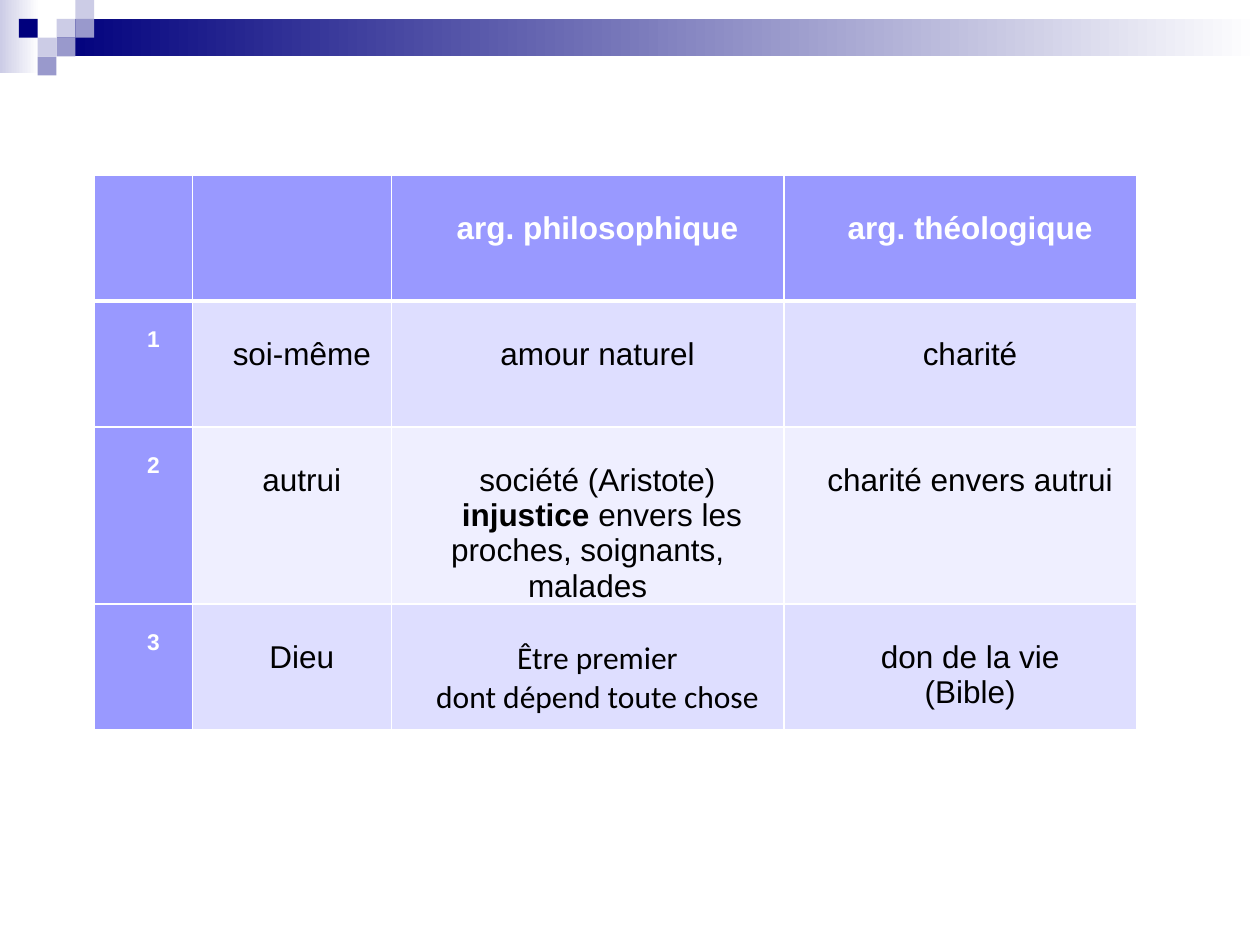
from lxml.etree import SubElement
from pptx import Presentation
from pptx.dml.color import RGBColor
from pptx.enum.shapes import MSO_SHAPE as Shape
from pptx.enum.text import PP_ALIGN as Align
from pptx.oxml.ns import qn
from pptx.util import Cm, Pt

NAVY, LILAC, PALE, WHITE, BLACK = "00007D", "9999CC", "CCCCE6", "FFFFFF", "000000"
HEADER_FILL, BAND_FILLS = "9999FF", ("EFEFFF", "DEDEFF")

GRADIENT_BARS = [
    (0, 0, 0.79, 1.47, PALE),
    (1.14, 0.38, 24.26, 0.76, NAVY),
]
SQUARE = 0.38
SQUARES = [
    (3, 1, PALE), (4, 0, PALE), (4, 1, LILAC), (2, 2, PALE),
    (1, 1, NAVY), (3, 2, LILAC), (2, 3, LILAC),
]

ROWS = [
    ["", "", "arg. philosophique", "arg. théologique"],
    ["1", "soi-même", "amour naturel", "charité"],
    ["2", "autrui",
     ["société (Aristote)",
      [(" injustice", True), (" envers les proches, soignants, malades", False)]],
     "charité envers autrui"],
    ["3", "Dieu", ["Être premier", "dont dépend toute chose"],
     ["don de la vie", "(Bible)"]],
]
COLUMN_WIDTHS = [1.97, 4.01, 7.91, 7.11]
ROW_HEIGHTS = [2.53, 2.54, 3.56, 2.54]
TABLE_LEFT, TABLE_TOP = 1.91, 3.54
CALIBRI_CELL = (3, 2)


def color(value):
    return RGBColor.from_string(value)


def add_rectangle(page, left, top, width, height):
    box = page.shapes.add_shape(
        Shape.RECTANGLE, Cm(left), Cm(top), Cm(width), Cm(height))
    box.shadow.inherit = False
    box.line.fill.background()
    return box


def add_banner(page):
    for left, top, width, height, start in GRADIENT_BARS:
        fill = add_rectangle(page, left, top, width, height).fill
        fill.gradient()
        fill.gradient_angle = 0
        for stop, value in zip(fill.gradient_stops, (start, WHITE)):
            stop.color.rgb = color(value)
    for column, row, value in SQUARES:
        box = add_rectangle(page, column * SQUARE, row * SQUARE, SQUARE, SQUARE)
        box.fill.solid()
        box.fill.fore_color.rgb = color(value)


def add_borders(cell, row):
    widths = {"L": 1, "R": 1, "T": 3 if row == 1 else 1, "B": 3 if row == 0 else 1}
    properties = cell._tc.get_or_add_tcPr()
    for side, width in widths.items():
        line = SubElement(properties, qn(f"a:ln{side}"), w=str(Pt(width)))
        fill = SubElement(line, qn("a:solidFill"))
        SubElement(fill, qn("a:srgbClr"), val=WHITE)


def write_cell(cell, content, row, column):
    heading = row == 0 or column == 0
    numbered = column == 0 and row > 0
    cell.margin_left = cell.margin_right = Cm(0.18)
    cell.margin_top = Cm(0.52 if numbered else 0.72)
    cell.margin_bottom = 0
    add_borders(cell, row)
    cell.fill.solid()
    cell.fill.fore_color.rgb = color(HEADER_FILL if heading else BAND_FILLS[row % 2])
    lines = content if isinstance(content, list) else [content]
    for index, line in enumerate(lines):
        frame = cell.text_frame
        para = frame.add_paragraph() if index else frame.paragraphs[0]
        para.alignment = Align.CENTER
        para._p.get_or_add_pPr().set("indent", str(Cm(0.4)))
        para.font.name = "Calibri" if (row, column) == CALIBRI_CELL else "Arial"
        para.font.size = Pt(13 if numbered else 18)
        para.font.bold = heading
        para.font.color.rgb = color(WHITE if heading else BLACK)
        for text, bold in line if isinstance(line, list) else [(line, heading)]:
            if text:
                span = para.add_run()
                span.text = text
                span.font.bold = bold


def add_arguments(page):
    table = page.shapes.add_table(
        len(ROWS), len(COLUMN_WIDTHS), Cm(TABLE_LEFT), Cm(TABLE_TOP),
        Cm(sum(COLUMN_WIDTHS)), Cm(sum(ROW_HEIGHTS))).table
    table.first_col = True
    for column, width in zip(table.columns, COLUMN_WIDTHS):
        column.width = Cm(width)
    for row, height in zip(table.rows, ROW_HEIGHTS):
        row.height = Cm(height)
    for row, contents in enumerate(ROWS):
        for column, content in enumerate(contents):
            write_cell(table.cell(row, column), content, row, column)


def main():
    deck = Presentation()
    deck.slide_width, deck.slide_height = Cm(25.4), Cm(19.05)
    page = deck.slides.add_slide(deck.slide_layouts[6])
    add_banner(page)
    add_arguments(page)
    deck.save("out.pptx")


if __name__ == "__main__":
    main()
